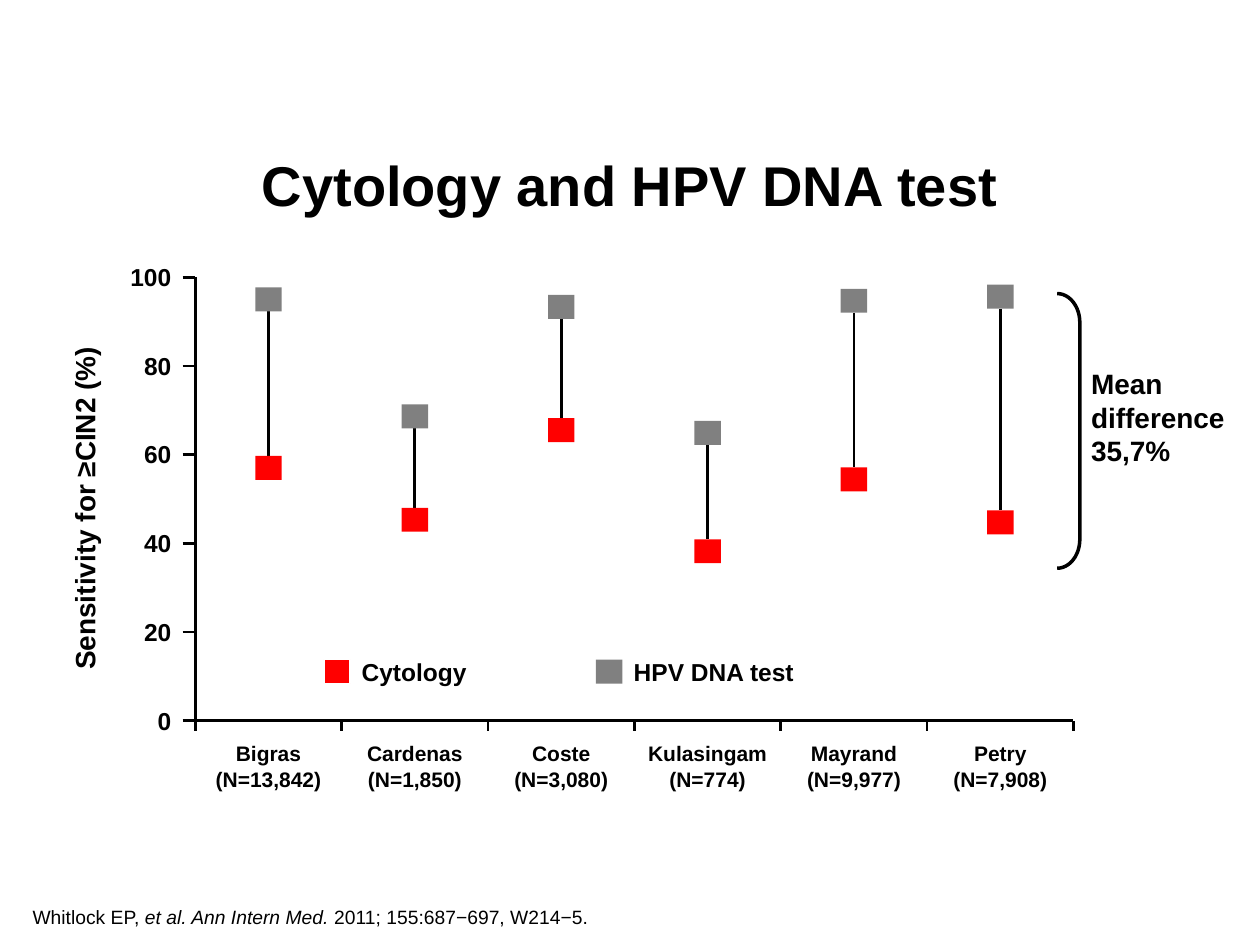
from dataclasses import dataclass

from pptx import Presentation
from pptx.dml.color import RGBColor
from pptx.enum.shapes import MSO_CONNECTOR, MSO_SHAPE
from pptx.enum.text import MSO_ANCHOR, PP_ALIGN
from pptx.oxml.ns import qn
from pptx.util import Pt
from lxml.etree import SubElement

PX = 9144  # EMU per px, 100 px to the inch


@dataclass(frozen=True)
class Theme:
    font: str = "Arial"
    ink: str = "000000"
    paper: str = "FFFFFF"
    cyto: str = "FF0000"
    hpv: str = "808080"
    title: int = 32
    head: int = 16
    label: int = 14
    small: int = 12
    note: int = 11
    line: float = 1.5
    brace: float = 2


T = Theme()
MARK = 21, 19

# Study, size, HPV DNA test (%), cytology (%)
STUDIES = [
    ("Bigras", "(N=13,842)", 95, 57),
    ("Cardenas", "(N=1,850)", 68.6, 45.3),
    ("Coste", "(N=3,080)", 93.3, 65.5),
    ("Kulasingam", "(N=774)", 64.9, 38.2),
    ("Mayrand", "(N=9,977)", 94.7, 54.4),
    ("Petry", "(N=7,908)", 95.6, 44.7),
]


def emu(*vals):
    return [round(v * PX) for v in vals]


def rgb(code):
    return RGBColor.from_string(code)


def text(slide, box, paras, size, align=PP_ALIGN.LEFT, anchor=MSO_ANCHOR.TOP,
         bold=True, wrap=False, inset=(0, 0), space=None):
    """Each paragraph is a list of (words, italic) runs; None breaks the line."""
    shape = slide.shapes.add_textbox(*emu(*box))
    frame = shape.text_frame
    frame.word_wrap = wrap
    frame.vertical_anchor = anchor
    frame.margin_left = frame.margin_right = inset[0] * PX
    frame.margin_top = frame.margin_bottom = inset[1] * PX
    for i, runs in enumerate(paras):
        para = frame.add_paragraph() if i else frame.paragraphs[0]
        para.alignment = align
        para.line_spacing = space
        for part in runs:
            if part is None:
                para.add_line_break()
                continue
            run = para.add_run()
            run.text, run.font.italic = part
            run.font.name = T.font
            run.font.size = Pt(size)
            run.font.bold = bold
            run.font.color.rgb = rgb(T.ink)
    return shape


def line(slide, x1, y1, x2, y2):
    link = slide.shapes.add_connector(MSO_CONNECTOR.STRAIGHT, *emu(x1, y1, x2, y2))
    link.line.color.rgb = rgb(T.ink)
    link.line.width = Pt(T.line)
    SubElement(link._element.spPr, qn("a:effectLst"))
    return link


def mark(slide, x, y, color):
    """A square marker centred on x, y."""
    w, h = MARK
    shape = slide.shapes.add_shape(
        MSO_SHAPE.RECTANGLE, *emu(x - w / 2, y - h / 2, w, h))
    shape.shadow.inherit = False
    shape.fill.solid()
    shape.fill.fore_color.rgb = rgb(color)
    shape.line.fill.background()
    return shape


def axes(slide, box):
    x, y, w, h = box
    base, step = y + h, w / len(STUDIES)
    # Value axis
    line(slide, x, y, x, base)
    for val in range(0, 101, 20):
        at = base - h * val / 100
        line(slide, x - 10, at, x, at)
        text(slide, (x - 54, at - 12, 35, 23), [[(str(val), False)]],
             T.label, PP_ALIGN.RIGHT)
    name = text(slide, (x - 218, y + 170, 260, 27),
                [[("Sensitivity for ≥CIN2 (%)", False)]], T.head, PP_ALIGN.CENTER)
    name.rotation = 270
    # Study axis
    line(slide, x, base, x + w, base)
    for i in range(len(STUDIES) + 1):
        line(slide, x + i * step, base + 8, x + i * step, base)
    for i, (who, size, *_) in enumerate(STUDIES):
        text(slide, (x + i * step, base + 16, step, 37),
             [[(who, False), None, (size, False)]], T.small, PP_ALIGN.CENTER)


def pairs(slide, box):
    x, y, w, h = box
    step = w / len(STUDIES)
    for i, (_, _, high, low) in enumerate(STUDIES):
        mid = x + (i + 0.5) * step
        top, end = (y + h * (1 - val / 100) for val in (high, low))
        link = line(slide, mid, top, mid, end)
        link.begin_connect(mark(slide, mid, top, T.hpv), 2)
        link.end_connect(mark(slide, mid, end, T.cyto), 0)


def legend(slide, box):
    x, y, w, h = box
    items = [("Cytology", T.cyto, 0, 84), ("HPV DNA test", T.hpv, 216, 133)]
    for name, color, dx, wide in items:
        key = mark(slide, x + dx + MARK[0] / 2, y + h / 2, color)
        if color == T.cyto:
            key.line.color.rgb = rgb(T.paper)
            key.line.width = Pt(0.88)
        text(slide, (x + dx + 30, y, wide, h), [[(name, False)]],
             T.label, anchor=MSO_ANCHOR.MIDDLE)


def brace(slide, box):
    x, y, w, h = box
    shape = slide.shapes.add_shape(MSO_SHAPE.RIGHT_BRACKET, *emu(x, y, 18, h))
    shape.shadow.inherit = False
    shape.adjustments[0] = 1.28
    shape.fill.background()
    shape.line.color.rgb = rgb(T.ink)
    shape.line.width = Pt(T.brace)
    text(slide, (x + 27, y + 58, w - 27, 81),
         [[("Mean difference", False)], [("35,7%", False)]], T.head, wrap=True)


def title(slide, box):
    text(slide, box, [[("Cytology and HPV DNA test", False)]], T.title,
         PP_ALIGN.CENTER, MSO_ANCHOR.MIDDLE, wrap=True, inset=(10, 5))


def source(slide, box):
    runs = [("Whitlock EP, ", False), ("et al. Ann Intern Med. ", True),
            ("2011; 155:687−697, W214−5.", False)]
    text(slide, box, [runs], T.note, anchor=MSO_ANCHOR.BOTTOM, bold=False,
         wrap=True, inset=(10, 5), space=0.95)


def main():
    deck = Presentation()
    deck.slide_width, deck.slide_height = emu(1000, 750)
    slide = deck.slides.add_slide(deck.slide_layouts[6])
    plot = 155, 220, 697, 352
    title(slide, (50, 101, 900, 91))
    source(slide, (16, 692, 969, 50))
    axes(slide, plot)
    pairs(slide, plot)
    legend(slide, (257, 521, 380, 24))
    brace(slide, (839, 233, 146, 218))
    deck.save("out.pptx")


if __name__ == "__main__":
    main()
